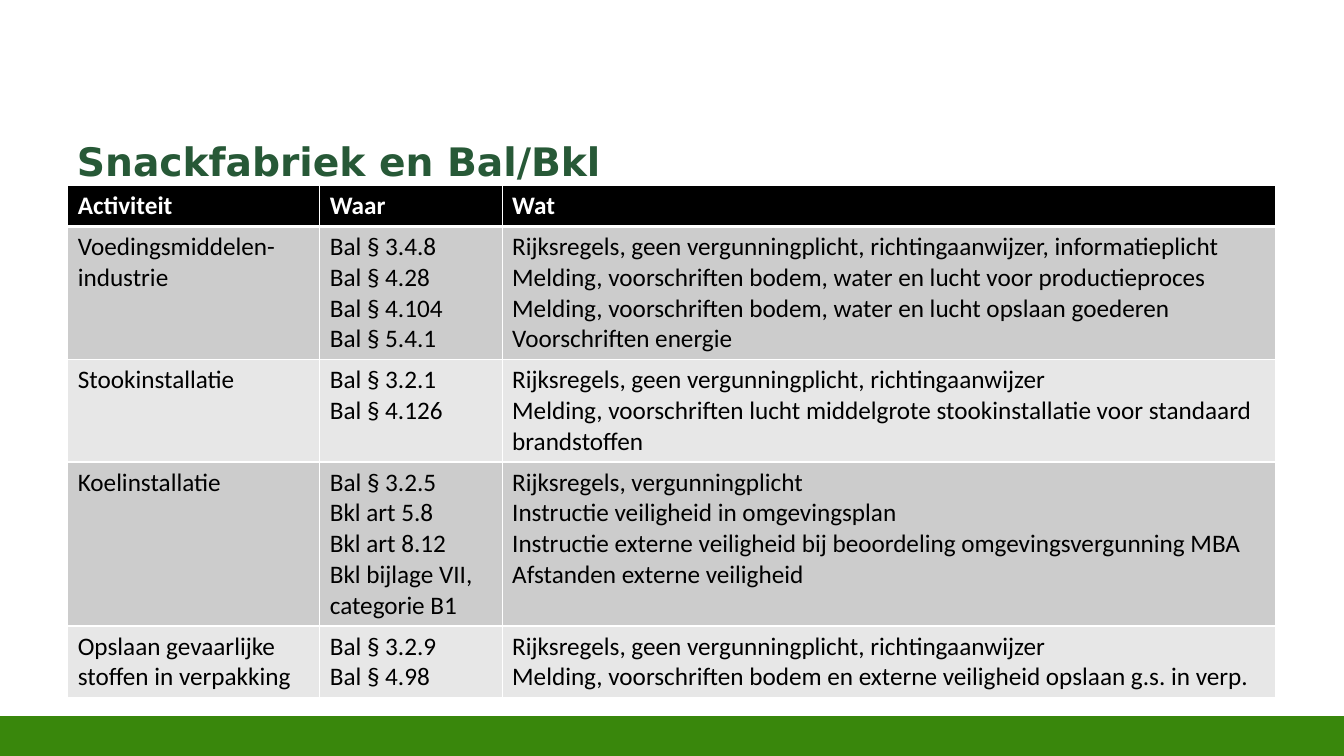
from dataclasses import dataclass

from lxml import etree
from pptx import Presentation
from pptx import util as u
from pptx.dml import color
from pptx.enum import shapes, text
from pptx.oxml import ns


@dataclass(frozen=True)
class Theme:
    """Hold the colours, fonts and type sizes of the slide."""

    green: str = "39870C"
    dark: str = "275937"
    black: str = "000000"
    white: str = "FFFFFF"
    bands: tuple = ("CCCCCC", "E7E7E7")
    head: str = "DejaVu Sans"
    body: str = "Calibri"
    large: int = 28
    small: int = 18


THEME = Theme()

HEADS = ("Activiteit", "Waar", "Wat")
ROWS = (
    ("Voedingsmiddelen-industrie",
     "Bal § 3.4.8\nBal § 4.28\nBal § 4.104\nBal § 5.4.1",
     "Rijksregels, geen vergunningplicht, richtingaanwijzer, informatieplicht\n"
     "Melding, voorschriften bodem, water en lucht voor productieproces\n"
     "Melding, voorschriften bodem, water en lucht opslaan goederen\n"
     "Voorschriften energie"),
    ("Stookinstallatie",
     "Bal § 3.2.1\nBal § 4.126",
     "Rijksregels, geen vergunningplicht, richtingaanwijzer\n"
     "Melding, voorschriften lucht middelgrote stookinstallatie voor standaard brandstoffen"),
    ("Koelinstallatie",
     "Bal § 3.2.5\nBkl art 5.8\nBkl art 8.12\nBkl bijlage VII, categorie B1",
     "Rijksregels, vergunningplicht\n"
     "Instructie veiligheid in omgevingsplan\n"
     "Instructie externe veiligheid bij beoordeling omgevingsvergunning MBA\n"
     "Afstanden externe veiligheid"),
    ("Opslaan gevaarlijke stoffen in verpakking",
     "Bal § 3.2.9\nBal § 4.98",
     "Rijksregels, geen vergunningplicht, richtingaanwijzer\n"
     "Melding, voorschriften bodem en externe veiligheid opslaan g.s. in verp."),
)
LINES = (1, 4, 3, 5, 2)
WIDTHS = (180, 130.3)


def apply(item, values):
    """Set each attribute named in values on item."""
    for name, value in values.items():
        setattr(item, name, value)


def style(frame, font, size, tint, bold):
    """Format every paragraph of a text frame."""
    for para in frame.paragraphs:
        para.alignment = text.PP_ALIGN.LEFT
        apply(para.font, {"name": font, "size": u.Pt(size), "bold": bold})
        para.font.color.rgb = color.RGBColor.from_string(tint)


def paint(fill, tint):
    """Give a fill one solid colour."""
    fill.solid()
    fill.fore_color.rgb = color.RGBColor.from_string(tint)


def edge(cell, top, base):
    """Draw white borders round a cell, with given top and base widths."""
    props = cell._tc.get_or_add_tcPr()
    sides = {"lnL": 1, "lnR": 1, "lnT": top, "lnB": base}
    for spot, (side, width) in enumerate(sides.items()):
        line = etree.Element(ns.qn("a:" + side), w=str(u.Pt(width)))
        solid = etree.SubElement(line, ns.qn("a:solidFill"))
        etree.SubElement(solid, ns.qn("a:srgbClr"), val=THEME.white)
        props.insert(spot, line)


def footer(slide, left, top, width, height):
    """Place the green bar in its box."""
    box = map(u.Pt, (left, top, width, height))
    bar = slide.shapes.add_shape(shapes.MSO_SHAPE.RECTANGLE, *box)
    bar.shadow.inherit = False
    paint(bar.fill, THEME.green)
    paint(bar.line.fill, THEME.green)
    bar.line.width = u.Pt(2)


def title(slide, left, top, width, height):
    """Place the title in its box."""
    head = slide.shapes.title
    apply(head, {"left": u.Pt(left), "top": u.Pt(top),
                 "width": u.Pt(width), "height": u.Pt(height)})
    frame = head.text_frame
    frame.text = "Snackfabriek en Bal/Bkl"
    apply(frame, {"word_wrap": True, "auto_size": text.MSO_AUTO_SIZE.NONE,
                  "vertical_anchor": text.MSO_ANCHOR.TOP,
                  "margin_top": u.Pt(6)})
    style(frame, THEME.head, THEME.large, THEME.dark, True)


def rules(slide, left, top, width):
    """Place the table of activities, with rows sized by line count."""
    highs = [22 * count + 7 for count in LINES]
    box = map(u.Pt, (left, top, width, sum(highs)))
    grid = slide.shapes.add_table(len(highs), len(HEADS), *box).table
    for col, wide in zip(grid.columns, (*WIDTHS, width - sum(WIDTHS))):
        col.width = u.Pt(wide)
    for index, (high, row) in enumerate(zip(highs, (HEADS, *ROWS))):
        grid.rows[index].height = u.Pt(high)
        first = index == 0
        back = THEME.black if first else THEME.bands[(index - 1) % 2]
        ink = THEME.white if first else THEME.black
        for spot, words in enumerate(row):
            cell = grid.cell(index, spot)
            cell.text = words
            style(cell.text_frame, THEME.body, THEME.small, ink, first)
            paint(cell.fill, back)
            edge(cell, 3 if index == 1 else 1, 3 if first else 1)


def main():
    """Build and save the slide."""
    deck = Presentation()
    apply(deck, {"slide_width": u.Pt(960), "slide_height": u.Pt(540)})
    slide = deck.slides.add_slide(deck.slide_layouts[5])
    footer(slide, 0, 512.5, 960, 28)
    title(slide, 47.8, 92.2, 864, 52.6)
    rules(slide, 48.4, 132.6, 863)
    deck.save("out.pptx")


if __name__ == "__main__":
    main()
